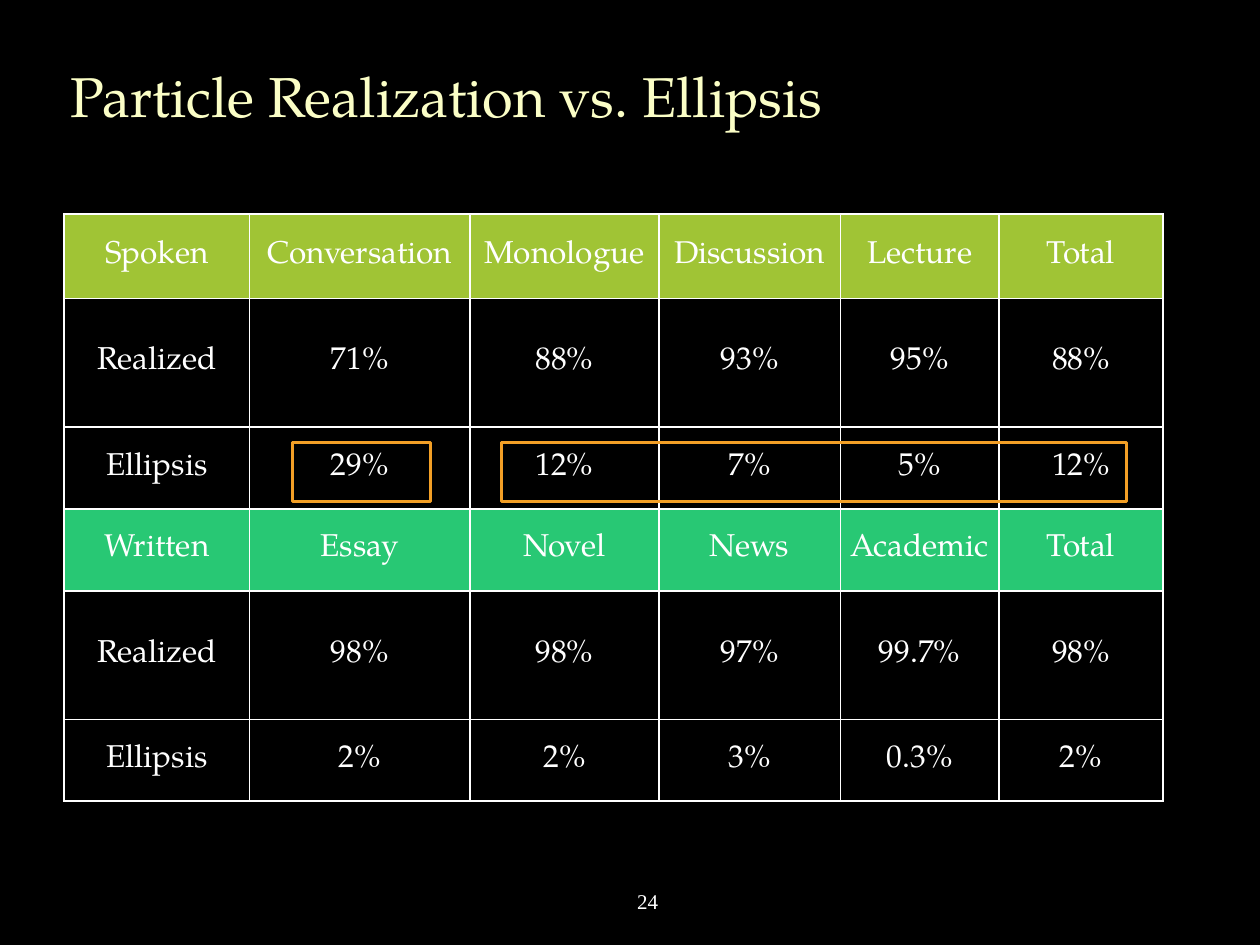
from dataclasses import dataclass

from lxml.etree import SubElement
from pptx import Presentation
from pptx.dml.color import RGBColor
from pptx.enum.shapes import MSO_SHAPE
from pptx.enum.text import MSO_ANCHOR, PP_ALIGN
from pptx.oxml.ns import qn
from pptx.util import Inches, Pt


@dataclass(frozen=True)
class Theme:
    """Colours, fonts and sizes of the slide."""
    back: str = "000000"
    text: str = "FFFFFF"
    title: str = "FBFEC6"
    spoken: str = "A0C435"
    written: str = "28C874"
    mark: str = "F29F26"
    serif: str = "TeX Gyre Pagella"
    plain: str = "Times New Roman"
    title_size: int = 32
    table_size: int = 18
    number_size: int = 12
    border: float = 1
    mark_line: float = 1.75


T = Theme()
COLS, ROWS = 100, 75
COL_SPANS = [14.7, 17.5, 15, 14.4, 12.6, 13]
ROW_SPANS = [6.7, 10.2, 6.5, 6.5, 10.2, 6.5]
CELLS = [
    ["Spoken", "Conversation", "Monologue", "Discussion", "Lecture", "Total"],
    ["Realized", "71%", "88%", "93%", "95%", "88%"],
    ["Ellipsis", "29%", "12%", "7%", "5%", "12%"],
    ["Written", "Essay", "Novel", "News", "Academic", "Total"],
    ["Realized", "98%", "98%", "97%", "99.7%", "98%"],
    ["Ellipsis", "2%", "2%", "3%", "0.3%", "2%"],
]
HEADER_FILLS = {0: T.spoken, 3: T.written}
MARKS = [(18.1, 18.1, 11, 4.7), (34.7, 18.1, 49.6, 4.7)]


def grid(*units):
    """Turn grid units into lengths."""
    return [Inches(u * 10 / COLS) for u in units]


def apply(obj, formats):
    """Set each attribute named in formats."""
    for name, value in formats.items():
        setattr(obj, name, value)


def write(tf, text, size, font, color, align=PP_ALIGN.CENTER):
    """Put one formatted run in a text frame."""
    p = tf.paragraphs[0]
    p.alignment = align
    r = p.add_run()
    r.text = text
    apply(r.font, {"size": Pt(size), "name": font})
    r.font.color.rgb = RGBColor.from_string(color)


def add_text(s, box, text, size, font, color, align, left=1):
    """Add a vertically centred text box."""
    tf = s.shapes.add_textbox(*grid(*box)).text_frame
    apply(tf, {"word_wrap": True, "vertical_anchor": MSO_ANCHOR.MIDDLE,
               "margin_left": grid(left)[0]})
    write(tf, text, size, font, color, align)


def add_borders(cell):
    """Draw the four cell borders ahead of the fill."""
    pr = cell._tc.get_or_add_tcPr()
    for i, side in enumerate(("lnL", "lnR", "lnT", "lnB")):
        ln = SubElement(pr, qn(f"a:{side}"), w=str(Pt(T.border)))
        SubElement(SubElement(ln, qn("a:solidFill")), qn("a:srgbClr"), val=T.text)
        pr.insert(i, ln)


def add_results(s, box):
    """Add the table of percentages."""
    shape = s.shapes.add_table(len(ROW_SPANS), len(COL_SPANS), *grid(*box))
    table = shape.table
    apply(table, {"first_row": False, "horz_banding": False})
    for col, width in zip(table.columns, grid(*COL_SPANS)):
        col.width = width
    for row, height in zip(table.rows, grid(*ROW_SPANS)):
        row.height = height
    side = Inches(0.07)
    for i, texts in enumerate(CELLS):
        for j, text in enumerate(texts):
            cell = table.cell(i, j)
            apply(cell, {"margin_left": side, "margin_right": side,
                         "margin_top": 0, "margin_bottom": 0,
                         "vertical_anchor": MSO_ANCHOR.MIDDLE})
            write(cell.text_frame, text, T.table_size, T.serif, T.text)
            if i in HEADER_FILLS:
                cell.fill.solid()
                cell.fill.fore_color.rgb = RGBColor.from_string(HEADER_FILLS[i])
            else:
                cell.fill.background()
            add_borders(cell)


def add_marks(s, box):
    """Frame the spoken ellipsis figures within the table box."""
    for x, y, w, h in MARKS:
        sp = s.shapes.add_shape(MSO_SHAPE.RECTANGLE,
                                *grid(box[0] + x, box[1] + y, w, h))
        sp.shadow.inherit = False
        sp.fill.background()
        sp.line.color.rgb = RGBColor.from_string(T.mark)
        sp.line.width = Pt(T.mark_line)


def main():
    """Build and save the slide."""
    prs = Presentation()
    prs.slide_width, prs.slide_height = grid(COLS, ROWS)
    s = prs.slides.add_slide(prs.slide_layouts[6])
    s.background.fill.solid()
    s.background.fill.fore_color.rgb = RGBColor.from_string(T.back)
    add_text(s, (45.3, 69.5, 12.2, 4), "24", T.number_size, T.plain, T.text,
             PP_ALIGN.CENTER)
    add_text(s, (3.5, 2.1, 96.5, 10.9), "Particle Realization vs. Ellipsis",
             T.title_size, T.serif, T.title, PP_ALIGN.LEFT, left=2.1)
    results = (5.1, 17, sum(COL_SPANS), sum(ROW_SPANS))
    add_results(s, results)
    add_marks(s, results)
    prs.save("out.pptx")


if __name__ == "__main__":
    main()
